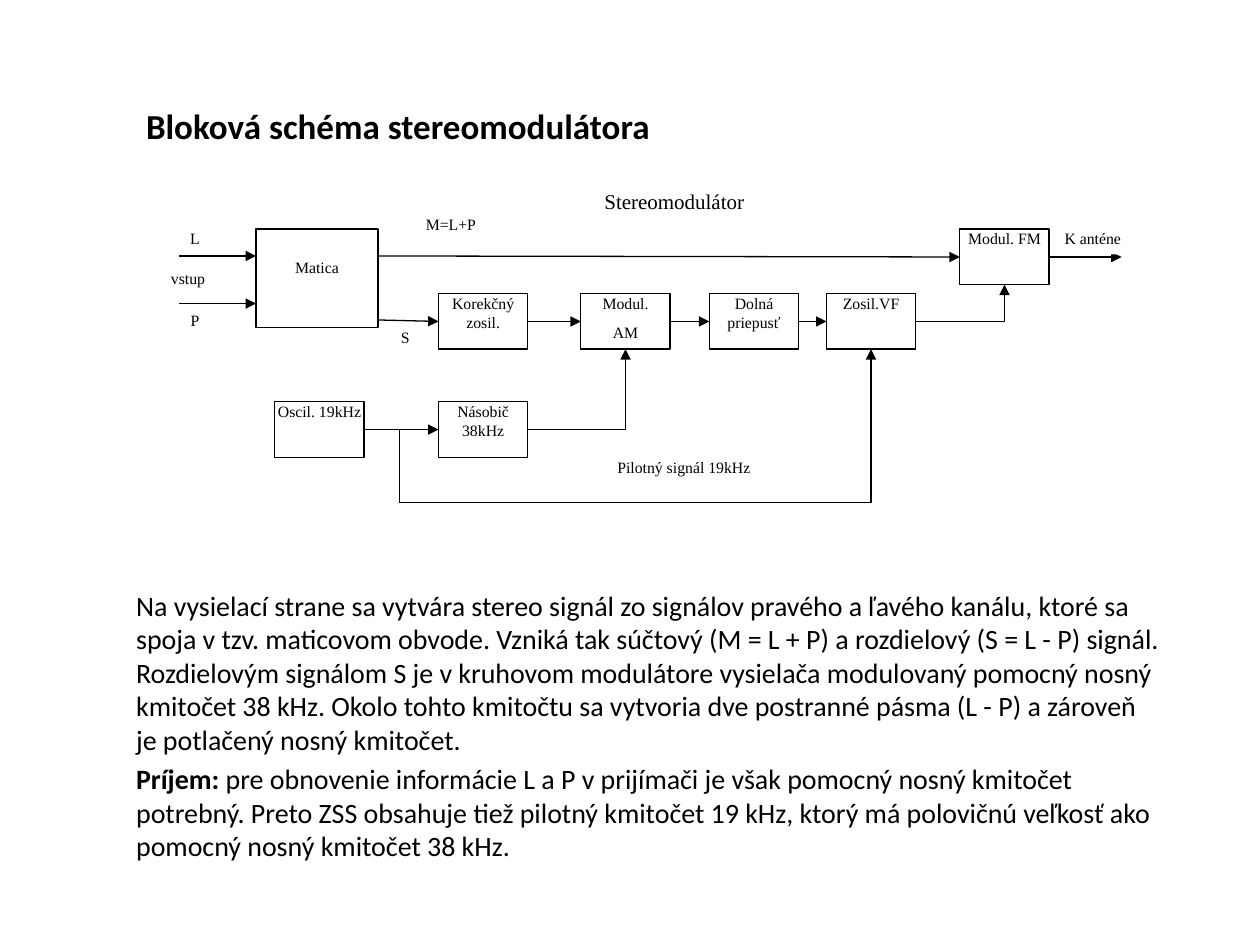
"""Builds a slide with the block diagram of a stereo modulator."""
from dataclasses import dataclass
from typing import Any, Optional

from pptx import Presentation
from pptx.dml.color import RGBColor
from pptx.enum import shapes, text
from pptx.oxml.ns import qn
from pptx.util import Cm, Pt
from lxml import etree


@dataclass(frozen=True)
class Theme:
    ink: RGBColor = RGBColor(0, 0, 0)
    paper: RGBColor = RGBColor(255, 255, 255)
    text_font: str = "Calibri"
    diagram_font: str = "Times New Roman"
    title_size: float = 20
    body_size: float = 16
    heading_size: float = 12
    label_size: float = 9
    line_width: float = 0.75
    label_gap: float = 6


@dataclass(frozen=True)
class Frame:
    left: float
    top: float
    width: float
    height: float


@dataclass(frozen=True)
class Block:
    name: str
    lines: tuple[str, ...]
    frame: Frame
    inset_top: float = 0


@dataclass(frozen=True)
class Label:
    wording: str
    frame: Frame
    size: float
    align: Any = text.PP_ALIGN.CENTER


@dataclass(frozen=True)
class End:
    x: float = 0
    y: float = 0
    block: Optional[str] = None
    side: int = 0


@dataclass(frozen=True)
class Wire:
    start: End
    finish: End
    bent: bool = False
    arrow: bool = True


THEME = Theme()
TOP, LEFT, BOTTOM, RIGHT = range(4)
UPPER_ROW, MIDDLE_ROW, LOWER_ROW = 4.62, 5.92, 8.1
SUM_Y, MATRIX_EDGE, INPUT_X = 5.16, 7.62, 3.61
PILOT_X, PILOT_Y, OSCILLATOR_Y = 8.05, 10.13, 8.66


def small_block(name: str, left: float, top: float, *lines: str) -> Block:
    """Describe a block of the common size."""
    return Block(name, lines, Frame(left, top, 1.8, 1.12))


def label(wording: str, left: float, top: float, width: float, **options: Any) -> Label:
    """Describe a caption of the common height."""
    return Label(wording, Frame(left, top, width, 0.51), **{"size": THEME.label_size, **options})


def joined(start: str, finish: str, sides: tuple[int, int] = (RIGHT, LEFT), bent: bool = False) -> Wire:
    """Describe an arrow between two blocks."""
    return Wire(End(block=start, side=sides[0]), End(block=finish, side=sides[1]), bent)


BLOCKS = (
    Block("matrix", ("Matica",), Frame(5.16, UPPER_ROW, 2.46, 1.98), 0.58),
    small_block("corrector", 8.84, MIDDLE_ROW, "Korekčný zosil."),
    small_block("am", 11.71, MIDDLE_ROW, "Modul.", "AM"),
    small_block("filter", 14.3, MIDDLE_ROW, "Dolná priepusť"),
    small_block("amplifier", 16.66, MIDDLE_ROW, "Zosil.VF"),
    small_block("fm", 19.35, UPPER_ROW, "Modul. FM"),
    small_block("multiplier", 8.84, LOWER_ROW, "Násobič 38kHz"),
    small_block("oscillator", 5.54, LOWER_ROW, "Oscil. 19kHz"),
)
WIRES = (
    Wire(End(MATRIX_EDGE, SUM_Y), End(block="fm", side=LEFT)),
    Wire(End(MATRIX_EDGE, 6.45), End(block="corrector", side=LEFT)),
    joined("corrector", "am"),
    joined("am", "filter"),
    joined("filter", "amplifier"),
    joined("amplifier", "fm", (RIGHT, BOTTOM), bent=True),
    joined("oscillator", "multiplier"),
    joined("multiplier", "am", (RIGHT, BOTTOM), bent=True),
    Wire(End(PILOT_X, PILOT_Y), End(block="amplifier", side=BOTTOM), bent=True),
    Wire(End(PILOT_X, PILOT_Y), End(PILOT_X, OSCILLATOR_Y), arrow=False),
    Wire(End(INPUT_X, SUM_Y), End(5.16, SUM_Y)),
    Wire(End(INPUT_X, 6.12), End(5.16, 6.12)),
    Wire(End(block="fm", side=RIGHT), End(22.61, 5.18)),
)
LABELS = (
    label("L", INPUT_X, UPPER_ROW, 0.64),
    label("P", INPUT_X, 6.27, 0.64),
    label("M=L+P", 8.2, 4.32, 1.78),
    label("S", 7.85, 6.6, 0.64),
    label("Pilotný signál 19kHz", 11.46, 9.22, 4.65),
    label("vstup", 2.9, 5.41, 1.78),
    label("K anténe", 21.46, UPPER_ROW, 1.88, align=text.PP_ALIGN.JUSTIFY),
    label("Stereomodulátor", 11.46, 3.81, 4.27, size=THEME.heading_size),
)
TITLE = "Bloková schéma stereomodulátora"
BODY = (
    ("", "Na vysielací strane sa vytvára stereo signál zo signálov pravého a ľavého kanálu, "
         "ktoré sa spoja v tzv. maticovom obvode. Vzniká tak súčtový (M = L + P) a rozdielový "
         "(S = L - P) signál. Rozdielovým signálom S je v kruhovom modulátore vysielača modulovaný "
         "pomocný nosný kmitočet 38 kHz. Okolo tohto kmitočtu sa vytvoria dve postranné pásma "
         "(L - P) a zároveň je potlačený nosný kmitočet."),
    ("Príjem:", " pre obnovenie informácie L a P v prijímači je však pomocný nosný kmitočet potrebný. "
                "Preto ZSS obsahuje tiež pilotný kmitočet 19 kHz, ktorý má polovičnú veľkosť ako "
                "pomocný nosný kmitočet 38 kHz."),
)


def place(box: Any, frame: Frame) -> None:
    """Move a box to its frame."""
    box.left, box.top = Cm(frame.left), Cm(frame.top)
    box.width, box.height = Cm(frame.width), Cm(frame.height)


def style(para: Any, name: str, size: float) -> None:
    """Set the type of a paragraph."""
    para.font.name, para.font.size = name, Pt(size)
    para.font.color.rgb = THEME.ink


def write_lines(box: Any, lines: tuple[str, ...], size: float, align: Any, inset_top: float = 0) -> None:
    """Fill a diagram box with short paragraphs on white."""
    box.fill.solid()
    box.fill.fore_color.rgb = THEME.paper
    frame = box.text_frame
    frame.word_wrap, frame.vertical_anchor = True, text.MSO_ANCHOR.TOP
    frame.margin_left = frame.margin_right = frame.margin_bottom = 0
    frame.margin_top = Cm(inset_top)
    frame.text = "\n".join(lines)
    for para in frame.paragraphs:
        para.alignment, para.space_after = align, Pt(THEME.label_gap)
        style(para, THEME.diagram_font, size)


def draw_block(page: Any, block: Block) -> Any:
    """Draw an outlined block."""
    box = page.shapes.add_shape(shapes.MSO_SHAPE.RECTANGLE, 0, 0, 0, 0)
    place(box, block.frame)
    box.shadow.inherit = False
    box.line.color.rgb, box.line.width = THEME.ink, Pt(THEME.line_width)
    write_lines(box, block.lines, THEME.label_size, text.PP_ALIGN.CENTER, block.inset_top)
    return box


def draw_label(page: Any, item: Label) -> None:
    """Draw a caption."""
    box = page.shapes.add_textbox(0, 0, 0, 0)
    place(box, item.frame)
    write_lines(box, (item.wording,), item.size, item.align)


def draw_wire(page: Any, wire: Wire, boxes: dict[str, Any]) -> None:
    """Draw a straight or one-bend connector."""
    kind = shapes.MSO_CONNECTOR.ELBOW if wire.bent else shapes.MSO_CONNECTOR.STRAIGHT
    start, finish = wire.start, wire.finish
    link = page.shapes.add_connector(kind, Cm(start.x), Cm(start.y), Cm(finish.x), Cm(finish.y))
    if start.block:
        link.begin_connect(boxes[start.block], start.side)
    if finish.block:
        link.end_connect(boxes[finish.block], finish.side)
    link.line.color.rgb, link.line.width = THEME.ink, Pt(THEME.line_width)
    properties = link._element.spPr
    if wire.bent:
        properties.find(qn("a:prstGeom")).set("prst", "bentConnector2")
    if wire.arrow:
        etree.SubElement(properties.find(qn("a:ln")), qn("a:tailEnd"), type="triangle")
    etree.SubElement(properties, qn("a:effectLst"))


def write_title(box: Any) -> None:
    """Fill and format the title placeholder."""
    place(box, Frame(2.69, 1.52, 21.21, 1.57))
    frame = box.text_frame
    frame.text, frame.vertical_anchor = TITLE, text.MSO_ANCHOR.BOTTOM
    frame.auto_size = text.MSO_AUTO_SIZE.NONE
    para = frame.paragraphs[0]
    para.alignment, para.font.bold = text.PP_ALIGN.LEFT, True
    style(para, THEME.text_font, THEME.title_size)


def write_body(box: Any) -> None:
    """Fill the body placeholder with unbulleted paragraphs."""
    place(box, Frame(2.49, 11.73, 21.21, 5.99))
    frame = box.text_frame
    frame.auto_size = text.MSO_AUTO_SIZE.NONE
    for number, (lead, wording) in enumerate(BODY):
        para = frame.add_paragraph() if number else frame.paragraphs[0]
        if lead:
            span = para.add_run()
            span.text, span.font.bold = lead, True
        para.add_run().text = wording
        properties = para._p.get_or_add_pPr()
        properties.set("marL", "0")
        properties.set("indent", "0")
        etree.SubElement(properties, qn("a:buNone"))
        style(para, THEME.text_font, THEME.body_size)


def main() -> None:
    """Build and save the deck."""
    deck = Presentation()
    deck.slide_width, deck.slide_height = Cm(25.4), Cm(19.05)
    page = deck.slides.add_slide(deck.slide_layouts[1])
    write_title(page.shapes.title)
    write_body(page.placeholders[1])
    boxes = {block.name: draw_block(page, block) for block in BLOCKS}
    for wire in WIRES:
        draw_wire(page, wire, boxes)
    for item in LABELS:
        draw_label(page, item)
    deck.save("out.pptx")


if __name__ == "__main__":
    main()
